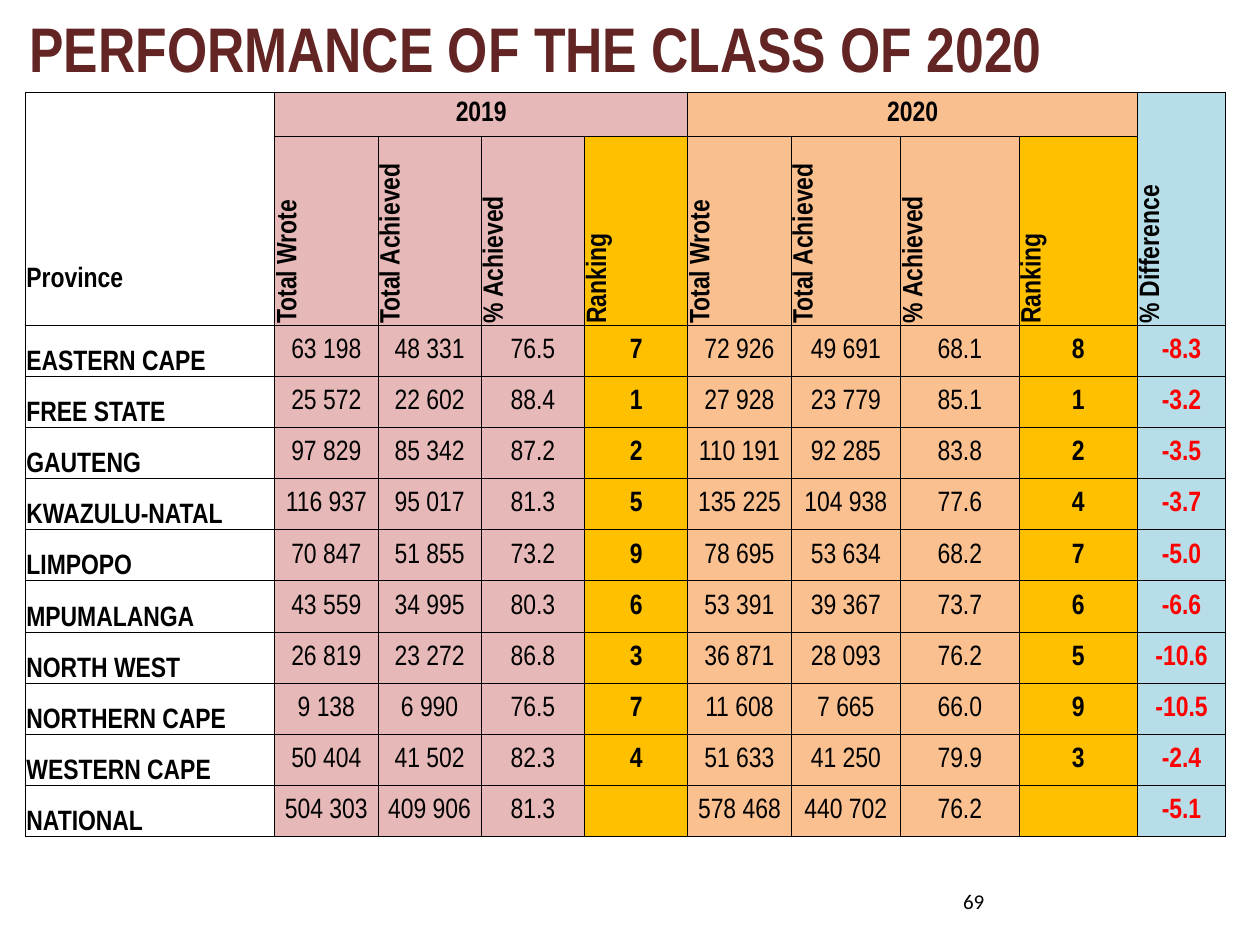
import pptx
import pptx.util
import pptx.dml.color
import pptx.enum.text
import pptx.oxml
import pptx.oxml.ns

Inches, Pt = pptx.util.Inches, pptx.util.Pt
ALIGN, ANCHOR = pptx.enum.text.PP_ALIGN, pptx.enum.text.MSO_ANCHOR

THEME = {
    "font": "Arial Narrow", "number_font": "Calibri",
    "title_size": 36, "table_size": 16, "number_size": 12,
    "title": "632523", "text": "000000", "negative": "FF0000", "border": "000000",
    "2019": "E6B9B8", "2020_head": "FABF8F", "2020": "FAC090",
    "ranking": "FFC000", "difference": "B7DEE8",
    "border_pt": 0.5,
}

TITLE = "PERFORMANCE OF THE CLASS OF 2020"
PAGE_NUMBER = "69"
YEARS = ("2019", "2020")
MEASURES = ("Total Wrote", "Total Achieved", "% Achieved", "Ranking")
RESULTS = [
    ("EASTERN CAPE", "63 198", "48 331", "76.5", "7", "72 926", "49 691", "68.1", "8", "-8.3"),
    ("FREE STATE", "25 572", "22 602", "88.4", "1", "27 928", "23 779", "85.1", "1", "-3.2"),
    ("GAUTENG", "97 829", "85 342", "87.2", "2", "110 191", "92 285", "83.8", "2", "-3.5"),
    ("KWAZULU-NATAL", "116 937", "95 017", "81.3", "5", "135 225", "104 938", "77.6", "4", "-3.7"),
    ("LIMPOPO", "70 847", "51 855", "73.2", "9", "78 695", "53 634", "68.2", "7", "-5.0"),
    ("MPUMALANGA", "43 559", "34 995", "80.3", "6", "53 391", "39 367", "73.7", "6", "-6.6"),
    ("NORTH WEST", "26 819", "23 272", "86.8", "3", "36 871", "28 093", "76.2", "5", "-10.6"),
    ("NORTHERN CAPE", "9 138", "6 990", "76.5", "7", "11 608", "7 665", "66.0", "9", "-10.5"),
    ("WESTERN CAPE", "50 404", "41 502", "82.3", "4", "51 633", "41 250", "79.9", "3", "-2.4"),
    ("NATIONAL", "504 303", "409 906", "81.3", "", "578 468", "440 702", "76.2", "", "-5.1"),
]

SLIDE_W, SLIDE_H = 10, 7.5
TABLE_LEFT, TABLE_TOP, TABLE_H = 0.2, 0.73, 5.91
COL_WIDTHS = [1.98] + [0.82] * 5 + [0.87, 0.94, 0.94, 0.7]
HEAD_HEIGHTS = [0.35, 1.5]
ROW_H = (TABLE_H - sum(HEAD_HEIGHTS)) / len(RESULTS)
ROW_HEIGHTS = HEAD_HEIGHTS + [ROW_H] * len(RESULTS)
PROVINCE_COL, DIFF_COL = 0, len(COL_WIDTHS) - 1
LINE_H = 0.25


def rgb(hex_value):
    return pptx.dml.color.RGBColor.from_string(hex_value)


def write(tf, text, size, color, bold=False, align=ALIGN.LEFT, font=THEME["font"]):
    tf.text = text
    p = tf.paragraphs[0]
    p.alignment = align
    for r in p.runs:
        r.font.name, r.font.size, r.font.bold = font, Pt(size), bold
        r.font.color.rgb = rgb(color)


def add_text(slide, box, text, size, color, **style):
    s = slide.shapes.add_textbox(*map(Inches, box))
    s.text_frame.word_wrap = True
    s.text_frame.vertical_anchor = ANCHOR.MIDDLE
    write(s.text_frame, text, size, color, **style)


def add_borders(cell):
    tc_pr = cell._tc.get_or_add_tcPr()
    for side in ("lnL", "lnR", "lnT", "lnB"):
        tc_pr.append(pptx.oxml.parse_xml(
            f'<a:{side} {pptx.oxml.ns.nsdecls("a")} w="{Pt(THEME["border_pt"])}">'
            f'<a:solidFill><a:srgbClr val="{THEME["border"]}"/></a:solidFill></a:{side}>'))


def is_ranking(col):
    return PROVINCE_COL < col < DIFF_COL and col % len(MEASURES) == 0


def fill_key(row, col):
    """Theme key of a cell's fill, or None for the province column."""
    if col == PROVINCE_COL:
        return None
    if col == DIFF_COL:
        return "difference"
    if is_ranking(col) and row > 0:
        return "ranking"
    if col <= len(MEASURES):
        return "2019"
    return "2020_head" if row < len(HEAD_HEIGHTS) else "2020"


def style_cell(cell, row, col, text):
    is_head = row < len(HEAD_HEIGHTS)
    is_province, is_diff = col == PROVINCE_COL, col == DIFF_COL
    is_vertical = is_head and (is_diff or (row == 1 and not is_province))
    cell.margin_left = cell.margin_right = cell.margin_top = Inches(0.01)
    cell.margin_bottom = Inches(LINE_H if is_province and is_head else 0)
    cell.vertical_anchor = ANCHOR.BOTTOM if is_province else ANCHOR.MIDDLE
    if is_vertical:
        cell._tc.get_or_add_tcPr().set("vert", "vert270")
    add_borders(cell)
    key = fill_key(row, col)
    if key:
        cell.fill.solid()
        cell.fill.fore_color.rgb = rgb(THEME[key])
    else:
        cell.fill.background()
    write(cell.text_frame, text, THEME["table_size"],
          THEME["negative" if is_diff and not is_head else "text"],
          bold=is_head or is_province or is_diff or is_ranking(col),
          align=ALIGN.LEFT if is_province or is_vertical else ALIGN.CENTER)


def add_results_table(slide):
    year_gap = [""] * (len(MEASURES) - 1)
    rows = [["Province", YEARS[0], *year_gap, YEARS[1], *year_gap, "% Difference"],
            ["", *MEASURES * len(YEARS), ""], *RESULTS]
    table = slide.shapes.add_table(
        len(rows), len(COL_WIDTHS), Inches(TABLE_LEFT), Inches(TABLE_TOP),
        Inches(sum(COL_WIDTHS)), Inches(TABLE_H)).table
    table.first_row = table.horz_banding = False
    for column, width in zip(table.columns, COL_WIDTHS):
        column.width = Inches(width)
    for table_row, height in zip(table.rows, ROW_HEIGHTS):
        table_row.height = Inches(height)
    for row, values in enumerate(rows):
        for col, text in enumerate(values):
            style_cell(table.cell(row, col), row, col, text)
    for col in (PROVINCE_COL, DIFF_COL):
        table.cell(0, col).merge(table.cell(1, col))
    for year in range(len(YEARS)):
        first = 1 + year * len(MEASURES)
        table.cell(0, first).merge(table.cell(0, first + len(MEASURES) - 1))


def main():
    prs = pptx.Presentation()
    prs.slide_width, prs.slide_height = Inches(SLIDE_W), Inches(SLIDE_H)
    slide = prs.slides.add_slide(prs.slide_layouts[6])
    add_text(slide, (0.12, 0.02, 8.27, 0.71), TITLE, THEME["title_size"],
             THEME["title"], bold=True, align=ALIGN.CENTER)
    add_results_table(slide)
    add_text(slide, (7.36, 6.9, 0.55, 0.51), PAGE_NUMBER, THEME["number_size"],
             THEME["text"], align=ALIGN.RIGHT, font=THEME["number_font"])
    prs.save("out.pptx")


if __name__ == "__main__":
    main()
